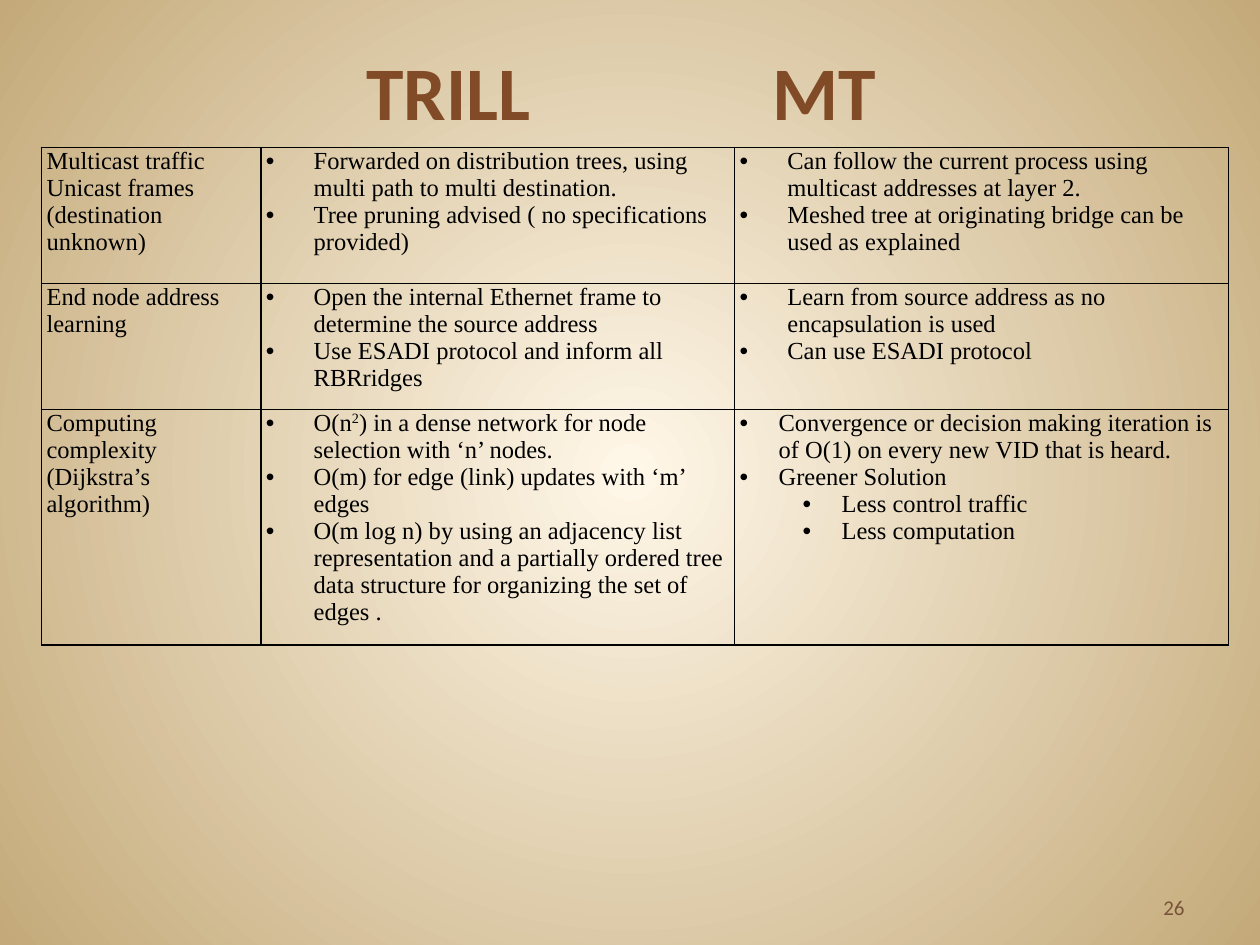
from dataclasses import dataclass

from lxml import etree
from pptx import Presentation
from pptx.dml.color import RGBColor
from pptx.enum.text import MSO_ANCHOR, PP_ALIGN
from pptx.oxml.ns import qn
from pptx.util import Inches, Pt

BOTTOM = MSO_ANCHOR.BOTTOM
CENTER, RIGHT = PP_ALIGN.CENTER, PP_ALIGN.RIGHT
COLORS = {"glow": "FFF7E8", "rim": "C4AA7A", "title": "804B26",
          "page": "795339", "ink": "000000"}
HEAD, BODY = "Calibri", "Times New Roman"


@dataclass
class Label:
    text: str
    box: tuple[float, float, float, float]
    size: float
    color: str
    align: PP_ALIGN
    bold: bool = False
    pad: float = 0


@dataclass
class Line:
    runs: list[str]  # every second run is superscript
    left: float = 0
    hang: float = 0
    level: int = 0


def plain(text: str) -> Line:
    return Line([text])


def item(*runs: str) -> Line:
    return Line(list(runs), 0.38, 0.38)


def point(text: str, level: int = 0) -> Line:
    return Line([text], 0.31 + 0.5 * level, 0.31, level)


LABELS = [
    Label("TRILL", (2.07, 0.33, 2.98, 0.75), 43.2, "title", CENTER, True),
    Label("MT", (5.05, 0.33, 2.98, 0.75), 43.2, "title", CENTER, True),
    Label("26", (7.17, 6.83, 2.33, 0.52), 12, "page", RIGHT, pad=0.1),
]
COLS = [1.74, 3.76, 3.92]
ROWS = [1.08, 1, 1.83]
CELLS = [
    [
        [plain("Multicast traffic"),
         plain("Unicast frames (destination unknown)")],
        [item("Forwarded on distribution trees, using multi path to multi destination."),
         item("Tree pruning advised ( no specifications provided)")],
        [item("Can follow the current process using multicast addresses at layer 2."),
         item("Meshed tree at originating bridge can be used as explained")],
    ],
    [
        [plain("End node address learning")],
        [item("Open the internal Ethernet frame to determine the source address"),
         item("Use ESADI protocol and inform all RBRridges")],
        [item("Learn from source address as no encapsulation is used"),
         item("Can use ESADI protocol")],
    ],
    [
        [plain("Computing complexity"), plain("(Dijkstra’s algorithm)")],
        [item("O(n", "2", ") in a dense network for node selection with ‘n’ nodes."),
         item("O(m) for edge (link) updates with ‘m’ edges"),
         item("O(m log n) by using an adjacency list representation and a "
              "partially ordered tree data structure for organizing the set of edges .")],
        [point("Convergence or decision making iteration is of O(1) on every "
               "new VID that is heard."),
         point("Greener Solution"),
         point("Less control traffic", 1),
         point("Less computation", 1)],
    ],
]


def rgb(name: str) -> RGBColor:
    return RGBColor.from_string(COLORS[name])


def add_run(para, text: str, font: str, size: float, color: str, bold: bool = False):
    run = para.add_run()
    run.text = text
    run.font.name, run.font.size, run.font.bold = font, Pt(size), bold
    run.font.color.rgb = rgb(color)
    return run


def paint_back(slide) -> None:
    fill = slide.background.fill
    fill.gradient()
    for stop, name, place in zip(fill.gradient_stops, ("glow", "rim"), (0, 1)):
        stop.color.rgb = rgb(name)
        stop.position = place
    grad = slide.background._cSld.find(".//" + qn("a:gradFill"))
    for line in grad.findall(qn("a:lin")):
        grad.remove(line)
    ring = etree.Element(qn("a:path"), path="circle")
    etree.SubElement(ring, qn("a:fillToRect"), {side: "50000" for side in "ltrb"})
    grad.find(qn("a:gsLst")).addnext(ring)


def add_label(slide, label: Label) -> None:
    frame = slide.shapes.add_textbox(*map(Inches, label.box)).text_frame
    frame.word_wrap = True
    frame.vertical_anchor = BOTTOM
    frame.margin_left = frame.margin_right = Inches(label.pad)
    frame.margin_top = frame.margin_bottom = Inches(label.pad / 2)
    para = frame.paragraphs[0]
    para.alignment = label.align
    add_run(para, label.text, HEAD, label.size, label.color, label.bold)


def add_line(para, line: Line) -> None:
    para.level = line.level
    if line.hang:
        props = para._p.get_or_add_pPr()
        props.set("marL", str(Inches(line.left)))
        props.set("indent", str(-Inches(line.hang)))
        etree.SubElement(props, qn("a:buFont"), typeface="Arial")
        etree.SubElement(props, qn("a:buChar"), char="•")
    for i, text in enumerate(line.runs):
        run = add_run(para, text, BODY, 14, "ink")
        if i % 2:
            run._r.get_or_add_rPr().set("baseline", "30000")


def add_edges(cell) -> None:
    props = cell._tc.get_or_add_tcPr()
    for i, side in enumerate("LRTB"):
        edge = etree.Element(qn("a:ln" + side), w=str(Pt(1)))
        fill = etree.SubElement(edge, qn("a:solidFill"))
        etree.SubElement(fill, qn("a:srgbClr"), val=COLORS["ink"])
        props.insert(i, edge)


def fill_cell(cell, lines: list[Line]) -> None:
    cell.fill.background()
    cell.margin_left = cell.margin_right = Inches(0.04)
    cell.margin_top = cell.margin_bottom = 0
    add_edges(cell)
    frame = cell.text_frame
    for i, line in enumerate(lines):
        add_line(frame.add_paragraph() if i else frame.paragraphs[0], line)


def add_grid(slide) -> None:
    shape = slide.shapes.add_table(len(ROWS), len(COLS), Inches(0.33), Inches(1.17),
                                   Inches(sum(COLS)), Inches(sum(ROWS)))
    table = shape.table
    table.first_row = table.horz_banding = False
    for col, width in zip(table.columns, COLS):
        col.width = Inches(width)
    for row, height, texts in zip(table.rows, ROWS, CELLS):
        row.height = Inches(height)
        for cell, lines in zip(row.cells, texts):
            fill_cell(cell, lines)


def main() -> None:
    deck = Presentation()
    deck.slide_width, deck.slide_height = Inches(10), Inches(7.5)
    slide = deck.slides.add_slide(deck.slide_layouts[6])
    paint_back(slide)
    # Column titles and page number
    for label in LABELS:
        add_label(slide, label)
    # Comparison table
    add_grid(slide)
    deck.save("out.pptx")


if __name__ == "__main__":
    main()
